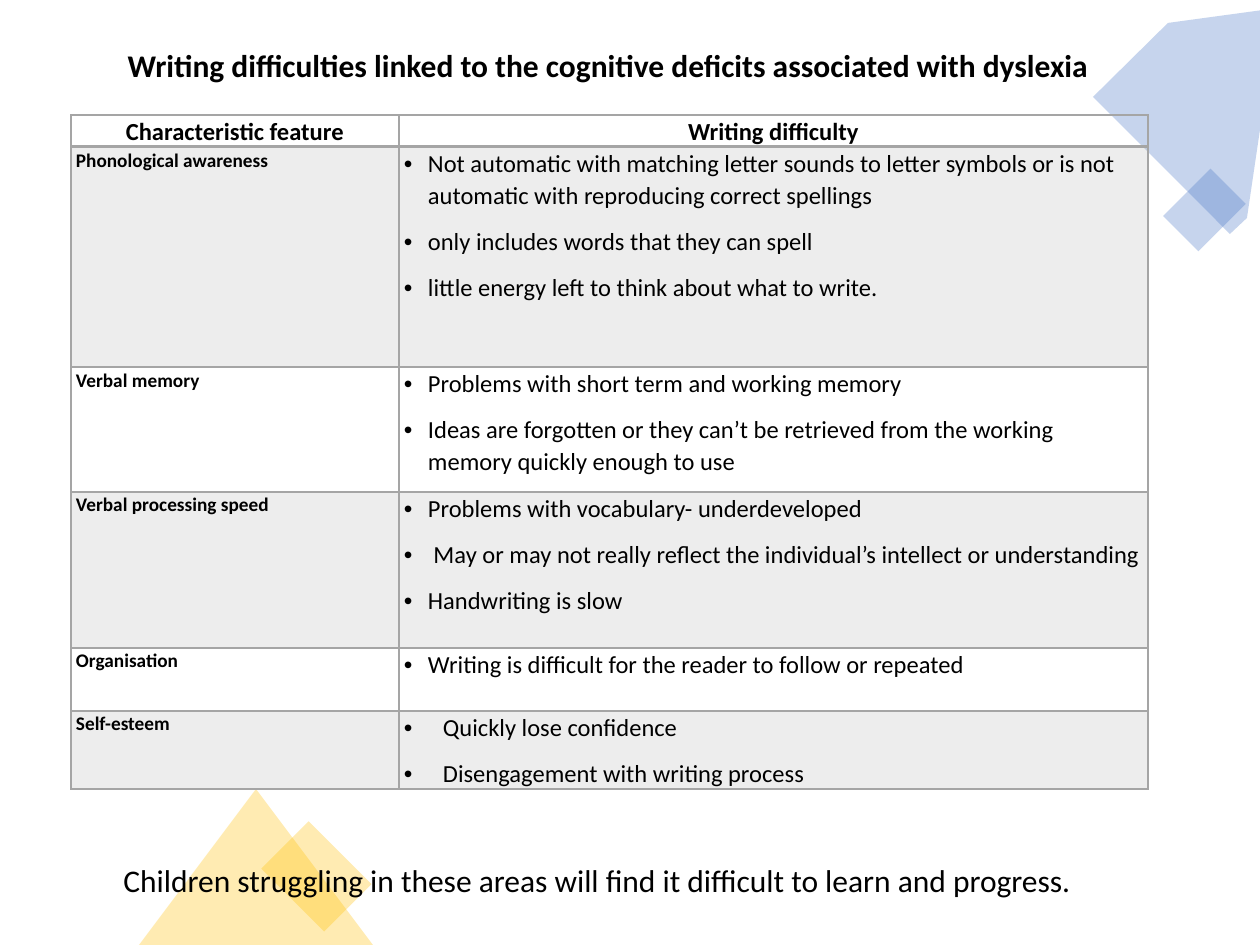
from dataclasses import dataclass

from lxml import etree
from pptx import Presentation
from pptx import util as u
from pptx.dml.color import RGBColor
from pptx.enum import shapes, text
from pptx.oxml.ns import qn

EMU_PER_PX = 914400 / 126


def px(n):
    return u.Emu(round(n * EMU_PER_PX))


@dataclass(frozen=True)
class Theme:
    font: str = "Calibri"
    ink: str = "000000"
    blue: str = "4472C4"
    gold: str = "FFC000"
    grey: str = "A5A5A5"
    heading: int = 18
    body: int = 14
    label: int = 11
    decor_alpha: int = 30
    band_alpha: int = 20


class Deck:
    def __init__(self, prs, theme):
        self.t = theme
        self.s = prs.slides.add_slide(prs.slide_layouts[5])

    def tint(self, fill, props, color, alpha):
        fill.solid()
        fill.fore_color.rgb = RGBColor.from_string(color)
        clr = props.find(qn("a:solidFill"))[0]
        etree.SubElement(clr, qn("a:alpha"), val=str(alpha * 1000))

    def decorate(self, sp, color):
        sp.shadow.inherit = False
        self.tint(sp.fill, sp._element.spPr, color, self.t.decor_alpha)
        sp.line.fill.background()

    def shape(self, kind, box, color, rotation=0):
        sp = self.s.shapes.add_shape(kind, *map(px, box))
        sp.rotation = rotation
        self.decorate(sp, color)

    def outline(self, points, color):
        fb = self.s.shapes.build_freeform(*points[0], scale=EMU_PER_PX)
        fb.add_line_segments(points[1:], close=True)
        self.decorate(fb.convert_to_shape(), color)

    def words(self, p, wording, size, bold=False, **fmt):
        r = p.add_run()
        r.text = wording
        for name, value in {"name": self.t.font, "size": u.Pt(size), "bold": bold}.items():
            setattr(r.font, name, value)
        r.font.color.rgb = RGBColor.from_string(self.t.ink)
        for name, value in fmt.items():
            setattr(p, name, value)

    def line_of_text(self, sp, box, wording, bold=False):
        for name, value in zip(("left", "top", "width", "height"), box):
            setattr(sp, name, px(value))
        tf = sp.text_frame
        tf.word_wrap = False
        tf.auto_size = text.MSO_AUTO_SIZE.NONE
        tf.vertical_anchor = text.MSO_ANCHOR.TOP
        self.words(tf.paragraphs[0], wording, self.t.heading, bold,
                   alignment=text.PP_ALIGN.LEFT)

    def title(self, box, wording):
        self.line_of_text(self.s.shapes.title, box, wording, bold=True)

    def note(self, box, wording):
        self.line_of_text(self.s.shapes.add_textbox(*map(px, box)), box, wording)

    def bullet(self, p, indent):
        pPr = p._p.get_or_add_pPr()
        pPr.set("marL", str(px(indent)))
        pPr.set("indent", str(-px(indent)))
        etree.SubElement(pPr, qn("a:buFont"), typeface="Arial")
        etree.SubElement(pPr, qn("a:buChar"), char="•")

    def borders(self, tcPr, widths):
        for side, width in widths.items():
            ln = etree.SubElement(tcPr, qn(f"a:ln{side}"), w=str(u.Pt(width)))
            fill = etree.SubElement(ln, qn("a:solidFill"))
            etree.SubElement(fill, qn("a:srgbClr"), val=self.t.grey)

    def cell(self, cell, row, lines, size, bold, indent=0, align=text.PP_ALIGN.LEFT):
        margins = {"margin_left": 5, "margin_right": 5, "margin_top": 0, "margin_bottom": 0}
        for name, value in margins.items():
            setattr(cell, name, px(value))
        tcPr = cell._tc.get_or_add_tcPr()
        self.borders(tcPr, {"L": 1, "R": 1, "T": 2 if row == 1 else 1, "B": 2 if row == 0 else 1})
        if row % 2:
            self.tint(cell.fill, tcPr, self.t.grey, self.t.band_alpha)
        else:
            cell.fill.background()
        tf = cell.text_frame
        for i, wording in enumerate(lines):
            p = tf.add_paragraph() if i else tf.paragraphs[0]
            if indent:
                self.bullet(p, indent)
            self.words(p, wording, size, bold, alignment=align,
                       line_spacing=1.07, space_after=u.Pt(8))

    def table(self, left, top, widths, heights, header, rows):
        box = (left, top, sum(widths), sum(heights))
        tbl = self.s.shapes.add_table(len(heights), len(widths), *map(px, box)).table
        tbl.first_row = tbl.horz_banding = False
        for col, width in zip(tbl.columns, widths):
            col.width = px(width)
        for row, height in zip(tbl.rows, heights):
            row.height = px(height)
        for c, wording in enumerate(header):
            self.cell(tbl.cell(0, c), 0, [wording], self.t.body, True, align=text.PP_ALIGN.CENTER)
        for i, (feature, indent, difficulties) in enumerate(rows, 1):
            self.cell(tbl.cell(i, 0), i, [feature], self.t.label, True)
            self.cell(tbl.cell(i, 1), i, difficulties, self.t.body, False, indent)


FEATURES = [
    ("Phonological awareness", 24, [
        "Not automatic with matching letter sounds to letter symbols or is not "
        "automatic with reproducing correct spellings",
        "only includes words that they can spell",
        "little energy left to think about what to write.",
    ]),
    ("Verbal memory", 24, [
        "Problems with short term and working memory",
        "Ideas are forgotten or they can’t be retrieved from the working "
        "memory quickly enough to use",
    ]),
    ("Verbal processing speed", 24, [
        "Problems with vocabulary- underdeveloped",
        " May or may not really reflect the individual’s intellect or understanding",
        "Handwriting is slow",
    ]),
    ("Organisation", 24, ["Writing is difficult for the reader to follow or repeated"]),
    ("Self-esteem", 39, ["Quickly lose confidence", "Disengagement with writing process"]),
]


def main():
    prs = Presentation()
    prs.slide_width, prs.slide_height = px(1260), px(945)
    theme = Theme()
    d = Deck(prs, theme)
    kinds = shapes.MSO_SHAPE

    d.outline([(1278, 8), (1168, 23), (1093, 97), (1230, 234), (1247, 218)], theme.blue)
    d.shape(kinds.RECTANGLE, (1171, 185, 67, 50), theme.blue, 315)
    d.shape(kinds.RECTANGLE, (272, 843, 89, 67), theme.gold, 45)
    d.shape(kinds.ISOSCELES_TRIANGLE, (139, 789, 234, 156), theme.gold)
    d.table(71, 115, (328, 749), (31, 220, 125, 156, 63, 78),
            ("Characteristic feature", "Writing difficulty"), FEATURES)
    d.note((111, 855, 1026, 50),
           "Children struggling in these areas will find it difficult to learn and progress.")
    d.title((115, 40, 988, 50),
            "Writing difficulties linked to the cognitive deficits associated with dyslexia")
    prs.save("out.pptx")


if __name__ == "__main__":
    main()
